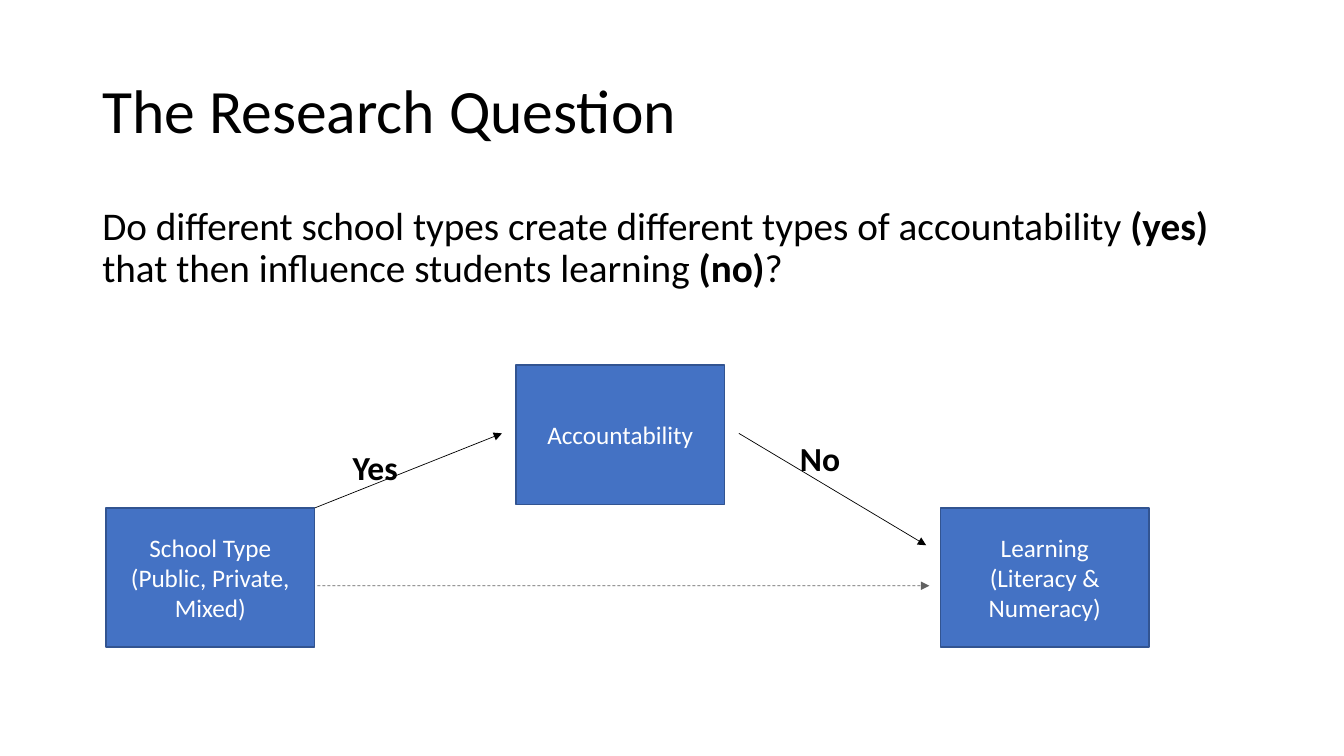
from dataclasses import dataclass

from lxml.etree import SubElement
from pptx import Presentation
from pptx.dml.color import RGBColor
from pptx.enum.dml import MSO_LINE_DASH_STYLE as DASH
from pptx.enum.shapes import MSO_CONNECTOR as CONN, MSO_SHAPE as SHAPE
from pptx.enum.text import MSO_ANCHOR as ANCHOR, PP_ALIGN as ALIGN
from pptx.oxml.ns import qn
from pptx.util import Cm, Pt

FONT = "Calibri"
COLORS = {"text": "000000", "box": "4472C4", "edge": "325491", "box_text": "FFFFFF"}
BOX_W, BOX_H = 5.26, 3.51


@dataclass
class Box:
    x: float
    y: float
    lines: list[str]


@dataclass
class Arrow:
    start: tuple[float, float]
    end: tuple[float, float]
    indirect: bool = False


@dataclass
class TextItem:
    x: float
    y: float
    w: float
    h: float
    size: int
    runs: list[tuple[str, bool]]
    anchor: ANCHOR = ANCHOR.TOP
    spacing: float = 1.0
    before: int = 0


BOXES = [
    Box(2.67, 12.8, ["School Type", "(Public, Private, Mixed)"]),
    Box(13, 9.2, ["Accountability"]),
    Box(23.7, 12.8, ["Learning", "(Literacy & Numeracy)"]),
]
ARROWS = [
    Arrow((7.93, 12.8), (12.65, 10.92)),
    Arrow((18.62, 10.92), (23.34, 13.74)),
    Arrow((8, 14.76), (23.42, 14.76), indirect=True),
]
TEXTS = [
    TextItem(2.33, 1.02, 29.21, 3.68, 44, [("The Research Question", False)],
             anchor=ANCHOR.MIDDLE, spacing=0.9),
    TextItem(2.33, 5.08, 29.21, 12.09, 28, [
        ("Do different school types create different types of accountability ", False),
        ("(yes)", True),
        (" that then influence students learning ", False),
        ("(no)", True),
        ("?", False),
    ], spacing=0.9, before=10),
    TextItem(8.64, 11.13, 1.78, 1.27, 24, [("Yes", True)]),
    TextItem(19.91, 10.92, 1.78, 1.27, 24, [("No", True)]),
]


def rgb(name: str) -> RGBColor:
    return RGBColor.from_string(COLORS[name])


def set_font(p, size: int, color: str) -> None:
    p.font.name = FONT
    p.font.size = Pt(size)
    p.font.color.rgb = rgb(color)


def add_text(s, item: TextItem) -> None:
    tf = s.shapes.add_textbox(Cm(item.x), Cm(item.y), Cm(item.w), Cm(item.h)).text_frame
    tf.word_wrap = True
    tf.vertical_anchor = item.anchor
    p = tf.paragraphs[0]
    p.line_spacing = item.spacing
    p.space_before = Pt(item.before)
    set_font(p, item.size, "text")
    for text, bold in item.runs:
        r = p.add_run()
        r.text = text
        r.font.bold = bold


def add_box(s, box: Box) -> None:
    sp = s.shapes.add_shape(SHAPE.RECTANGLE, Cm(box.x), Cm(box.y), Cm(BOX_W), Cm(BOX_H))
    sp.shadow.inherit = False
    sp.fill.solid()
    sp.fill.fore_color.rgb = rgb("box")
    sp.line.color.rgb = rgb("edge")
    sp.line.width = Pt(1)
    tf = sp.text_frame
    tf.word_wrap = True
    tf.vertical_anchor = ANCHOR.MIDDLE
    tf.text = "\n".join(box.lines)
    for p in tf.paragraphs:
        p.alignment = ALIGN.CENTER
        set_font(p, 18, "box_text")


def add_arrow(s, arrow: Arrow) -> None:
    ends = [Cm(v) for v in arrow.start + arrow.end]
    sp = s.shapes.add_connector(CONN.STRAIGHT, *ends)
    sp.line.color.rgb = rgb("text")
    sp.line.width = Pt(0.5)
    ln = sp.line._get_or_add_ln()
    if arrow.indirect:
        sp.line.dash_style = DASH.DASH
        # 62 % opacity
        SubElement(ln.find(".//" + qn("a:srgbClr")), qn("a:alpha"), val="62000")
    SubElement(ln, qn("a:tailEnd"), type="triangle")
    SubElement(sp._element.spPr, qn("a:effectLst"))


def main() -> None:
    prs = Presentation()
    prs.slide_width, prs.slide_height = Cm(33.87), Cm(19.05)
    s = prs.slides.add_slide(prs.slide_layouts[6])

    # Diagram
    for box in BOXES:
        add_box(s, box)
    for arrow in ARROWS:
        add_arrow(s, arrow)

    # Title, question and arrow labels
    for item in TEXTS:
        add_text(s, item)

    prs.save("out.pptx")


if __name__ == "__main__":
    main()
